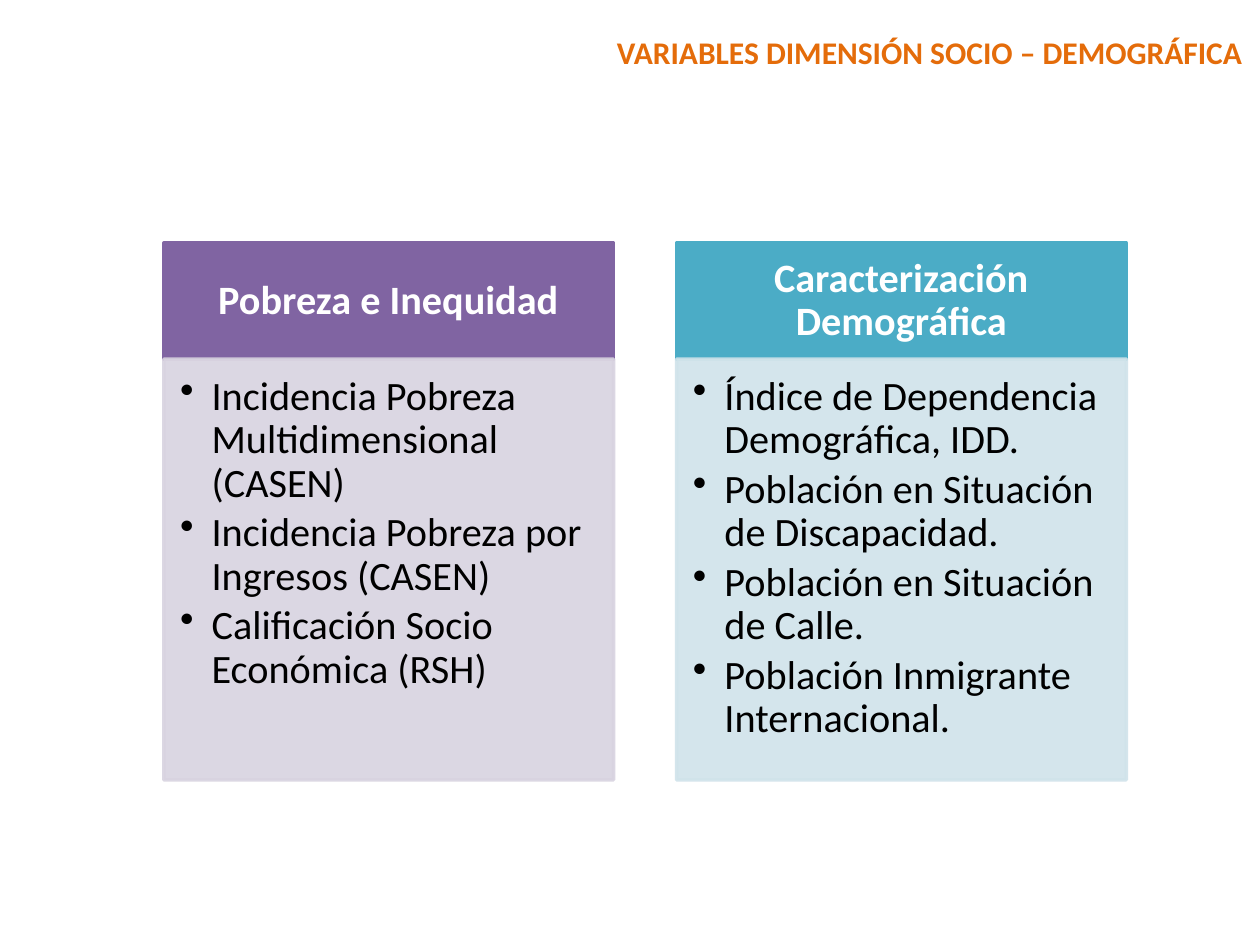
from lxml import etree
from pptx import Presentation
from pptx.dml.color import RGBColor
from pptx.enum.shapes import MSO_SHAPE
from pptx.enum.text import MSO_ANCHOR, PP_ALIGN
from pptx.oxml.ns import qn
from pptx.util import Inches, Pt

RECTANGLE = MSO_SHAPE.RECTANGLE
TOP, MIDDLE = MSO_ANCHOR.TOP, MSO_ANCHOR.MIDDLE
LEFT, CENTER, RIGHT = PP_ALIGN.LEFT, PP_ALIGN.CENTER, PP_ALIGN.RIGHT

COLUMN_LEFT, COLUMN_STEP, COLUMN_WIDTH = 1.3, 4.07, 3.57
HEADER_TOP, HEADER_HEIGHT, BODY_HEIGHT = 1.93, 0.92, 3.34

COLUMNS = [
    ("Pobreza e Inequidad", "8064A2", "D8D3E0", [
        "Incidencia Pobreza Multidimensional (CASEN)",
        "Incidencia Pobreza por Ingresos (CASEN)",
        "Calificación Socio Económica (RSH)",
    ]),
    ("Caracterización Demográfica", "4BACC6", "D0E3EA", [
        "Índice de Dependencia Demográfica, IDD.",
        "Población en Situación de Discapacidad.",
        "Población en Situación de Calle.",
        "Población Inmigrante Internacional.",
    ]),
]


def style_paragraph(para, align, size, color, bold=False):
    para.alignment = align
    para.font.name = "Calibri"
    para.font.size = Pt(size)
    para.font.bold = bold
    para.font.color.rgb = RGBColor.from_string(color)


def add_panel(left, top, height, color, anchor, margins):
    """Add a rectangle filled and outlined in one colour; margins run left, top, right, bottom."""
    panel = page.shapes.add_shape(
        RECTANGLE, Inches(left), Inches(top), Inches(COLUMN_WIDTH), Inches(height))
    panel.shadow.inherit = False
    panel.fill.solid()
    panel.fill.fore_color.rgb = RGBColor.from_string(color)
    panel.line.color.rgb = RGBColor.from_string(color)
    panel.line.width = Pt(2)
    frame = panel.text_frame
    frame.word_wrap = True
    frame.vertical_anchor = anchor
    (frame.margin_left, frame.margin_top,
     frame.margin_right, frame.margin_bottom) = [Inches(margin) for margin in margins]
    return panel


deck = Presentation()
deck.slide_width, deck.slide_height = Inches(10), Inches(7.5)
page = deck.slides.add_slide(deck.slide_layouts[6])

title = page.shapes.add_textbox(Inches(1.54), Inches(0.21), Inches(8.42), Inches(0.4))
title.text_frame.word_wrap = True
title.text_frame.text = "VARIABLES DIMENSIÓN SOCIO – DEMOGRÁFICA"
style_paragraph(title.text_frame.paragraphs[0], RIGHT, 18, "E46C0A", bold=True)

for index, (heading, strong, pale, items) in enumerate(COLUMNS):
    left = COLUMN_LEFT + index * COLUMN_STEP

    header = add_panel(left, HEADER_TOP, HEADER_HEIGHT, strong, MIDDLE, (0.18, 0.1, 0.18, 0.1))
    header.text_frame.text = heading
    para = header.text_frame.paragraphs[0]
    para.line_spacing = 0.9
    style_paragraph(para, CENTER, 23, "FFFFFF", bold=True)

    body = add_panel(left, HEADER_TOP + HEADER_HEIGHT, BODY_HEIGHT, pale, TOP,
                     (0.13, 0.13, 0.18, 0.2))
    for color in body._element.spPr.iter(qn("a:srgbClr")):
        etree.SubElement(color, qn("a:alpha"), val="90000")
    body.text_frame.text = "\n".join(items)
    for para in body.text_frame.paragraphs:
        para.level = 1
        para.line_spacing = 0.9
        para.space_after = Pt(3.45)
        properties = para._p.get_or_add_pPr()
        properties.set("marL", str(Inches(0.25)))
        properties.set("indent", str(Inches(-0.25)))
        etree.SubElement(properties, qn("a:buChar"), char="•")
        style_paragraph(para, LEFT, 23, "000000")

deck.save("out.pptx")
